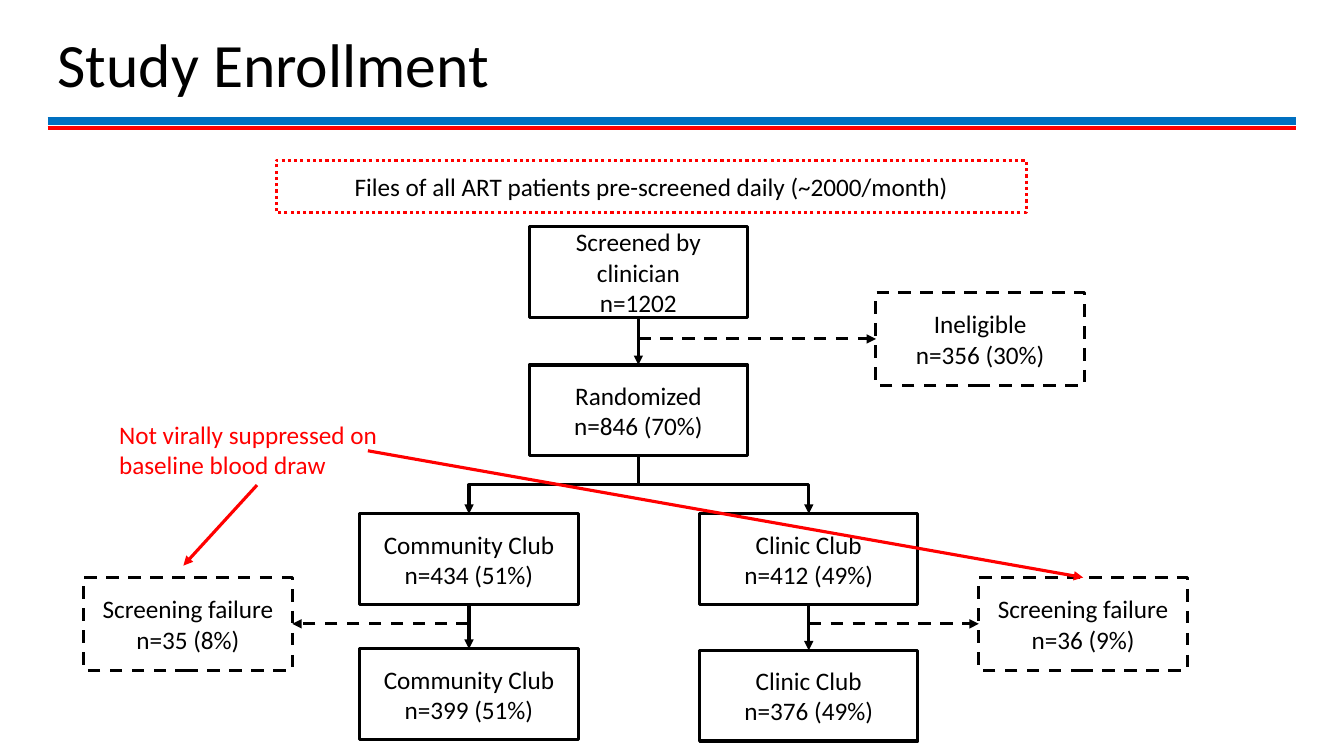
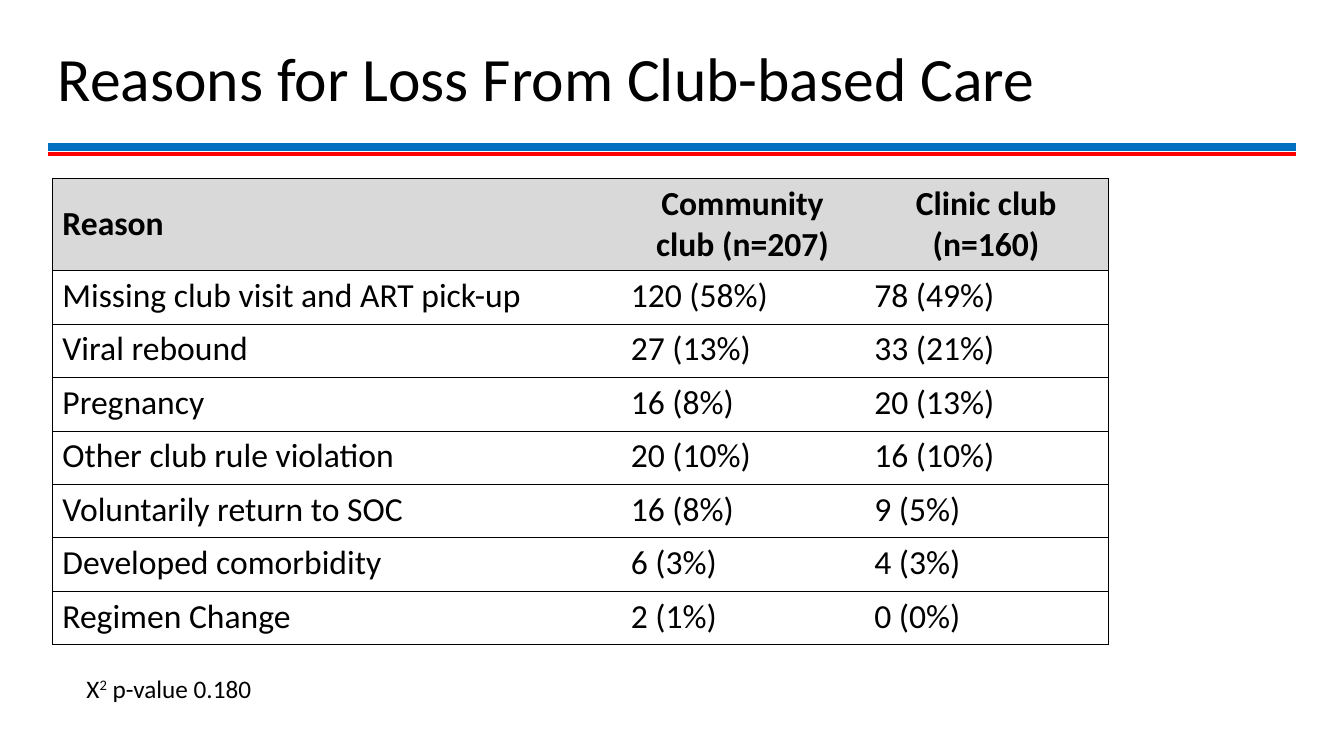
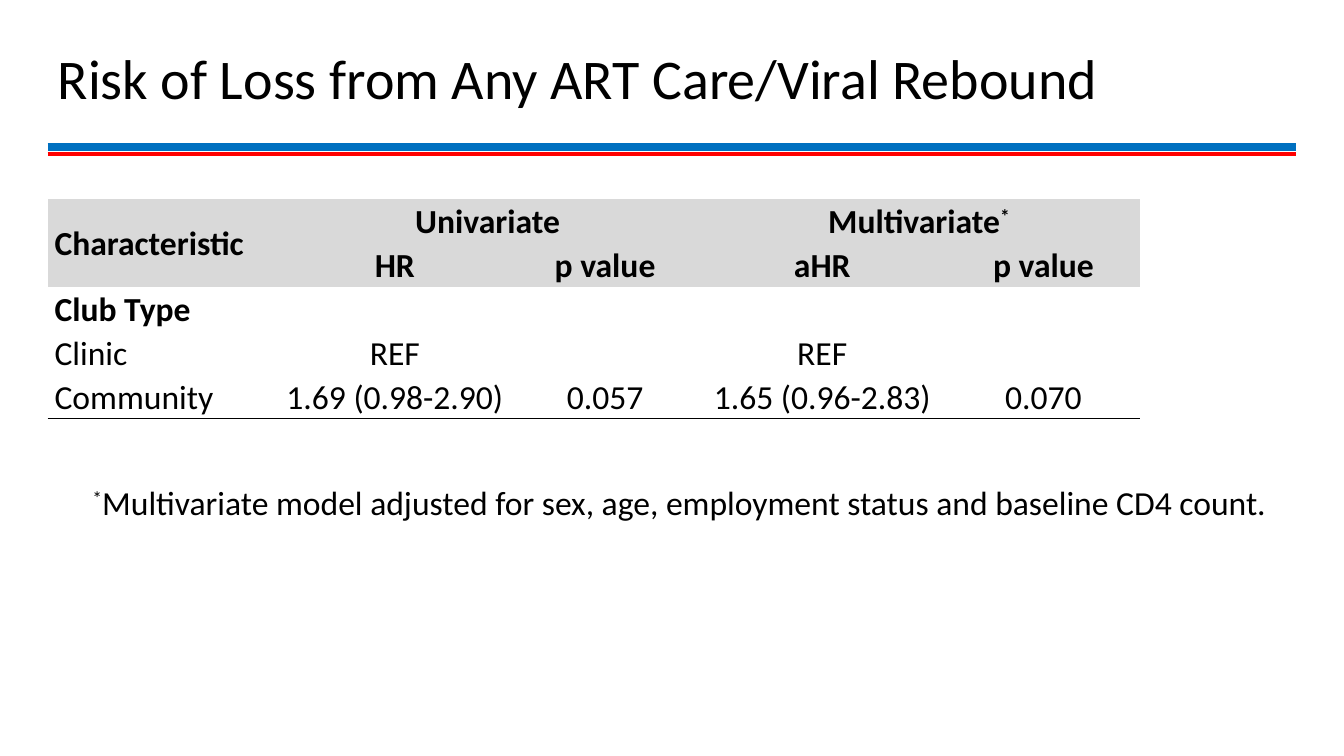
from dataclasses import dataclass
from typing import NamedTuple, Optional, Union

from pptx import Presentation
from pptx import util as u
from pptx.dml.color import RGBColor
from pptx.enum import dml, shapes, text
from pptx.oxml.ns import qn
from lxml import etree

Pt = u.Pt
FONT = "Calibri"
BLACK = RGBColor(0x00, 0x00, 0x00)
RED = RGBColor(0xFF, 0x00, 0x00)
BLUE = RGBColor(0x00, 0x70, 0xC0)
GREY = RGBColor(0xD9, 0xD9, 0xD9)

LEFT, RIGHT = 34, 926
LINE = 2.25
DASH, DOT = dml.MSO_LINE.DASH, dml.MSO_LINE.ROUND_DOT
CENTER = text.PP_ALIGN.CENTER
MIDDLE = text.MSO_ANCHOR.MIDDLE
TOP_SIDE, LEFT_SIDE, BOTTOM_SIDE, RIGHT_SIDE = range(4)
NO_STYLE = "{2D5ABB26-0587-4C30-8999-92F81FD0307C}"


@dataclass
class Box:
    text: str
    x: float
    y: float
    w: float = 156
    h: float = 64.8
    color: RGBColor = BLACK
    dash: Optional[dml.MSO_LINE] = None


class Point(NamedTuple):
    x: float
    y: float


class Joint(NamedTuple):
    shape: object
    site: int


class Header(NamedTuple):
    row: int
    col: int
    last_row: int
    last_col: int


End = Union[Point, Joint]


def write(tf, content: str, size: float, color=BLACK, bold=False, align=None, spacing=None) -> None:
    """Fill a text frame; a part between two ^ marks is superscript."""
    tf.text = content
    for p in tf.paragraphs:
        parts = p.text.split("^")
        p.text = parts[0]
        for i, part in enumerate(parts[1:], 1):
            r = p.add_run()
            r.text = part
            if i % 2:
                r.font._element.set("baseline", "30000")
        p.alignment = align
        p.line_spacing = spacing
        for r in p.runs:
            r.font.name, r.font.size, r.font.bold = FONT, Pt(size), bold
            r.font.color.rgb = color


def add_connector(s, start: End, end: End, color=BLACK, width=LINE, dash=None,
                  arrow=True, kind=shapes.MSO_CONNECTOR.STRAIGHT):
    ends = [e if isinstance(e, Point) else Point(0, 0) for e in (start, end)]
    c = s.shapes.add_connector(kind, *(Pt(v) for e in ends for v in e))
    if isinstance(start, Joint):
        c.begin_connect(*start)
    if isinstance(end, Joint):
        c.end_connect(*end)
    c.line.color.rgb, c.line.width = color, Pt(width)
    if dash:
        c.line.dash_style = dash
    if arrow:
        etree.SubElement(c.line._get_or_add_ln(), qn("a:tailEnd"), type="triangle")
    etree.SubElement(c._element.spPr, qn("a:effectLst"))
    return c


def add_elbow(s, start: Joint, end: Joint) -> None:
    """Arrow that leaves downward, turns halfway and arrives downward."""
    c = add_connector(s, start, end, kind=shapes.MSO_CONNECTOR.ELBOW)
    x1, y1, x2, y2 = c.begin_x, c.begin_y, c.end_x, c.end_y
    drop, reach = y2 - y1, abs(x2 - x1)
    to_right = x2 > x1
    xfrm = c._element.spPr.find(qn("a:xfrm"))
    xfrm.set("rot", str((270 if to_right else 90) * 60000))
    xfrm.set("flipH", "1" if to_right else "0")
    xfrm.set("flipV", "0")
    c.left, c.top = (x1 + x2 - drop) // 2, (y1 + y2 - reach) // 2
    c.width, c.height = drop, reach


def add_box(s, box: Box):
    sp = s.shapes.add_shape(shapes.MSO_SHAPE.RECTANGLE, Pt(box.x), Pt(box.y), Pt(box.w), Pt(box.h))
    sp.shadow.inherit = False
    sp.fill.background()
    sp.line.color.rgb, sp.line.width = box.color, Pt(LINE)
    if box.dash:
        sp.line.dash_style = box.dash
    tf = sp.text_frame
    tf.word_wrap, tf.vertical_anchor = True, MIDDLE
    write(tf, box.text, 18, align=CENTER)
    return sp


def add_note(s, content: str, x: float, y: float, w: float, h: float, size=18, color=BLACK) -> None:
    tf = s.shapes.add_textbox(Pt(x), Pt(y), Pt(w), Pt(h)).text_frame
    tf.word_wrap = True
    tf.auto_size = text.MSO_AUTO_SIZE.SHAPE_TO_FIT_TEXT
    write(tf, content, size, color)


def add_slide(prs, title: str, size=44, top=6, height=104.4, band_y=105.1):
    """Title-only slide with the blue and red rules under its title."""
    s = prs.slides.add_slide(prs.slide_layouts[5])
    sp = s.shapes.title
    sp.left, sp.top, sp.width, sp.height = Pt(LEFT), Pt(top), Pt(RIGHT - LEFT), Pt(height)
    tf = sp.text_frame
    tf.word_wrap, tf.vertical_anchor = True, MIDDLE
    tf.auto_size = text.MSO_AUTO_SIZE.NONE
    write(tf, title, size, align=text.PP_ALIGN.LEFT, spacing=0.9)
    for y, color, width in ((band_y, BLUE, 6), (band_y + 5.1, RED, 3)):
        add_connector(s, Point(LEFT, y), Point(RIGHT, y), color, width, arrow=False)
    return s


def add_table(s, x: float, y: float, widths: list[float], heights: list[float]):
    """Plain table without a style, so only what is set here shows."""
    frame = s.shapes.add_table(len(heights), len(widths), Pt(x), Pt(y),
                               Pt(sum(widths)), Pt(sum(heights)))
    table = frame.table
    table.first_row = table.horz_banding = False
    table._tbl.tblPr.find(qn("a:tableStyleId")).text = NO_STYLE
    for col, w in zip(table.columns, widths):
        col.width = Pt(w)
    for row, h in zip(table.rows, heights):
        row.height = Pt(h)
    return table


def format_cell(cell, header: bool, edges: str, width: float) -> None:
    """Draw black borders on the edges (letters out of LRTB), then fill."""
    tc_pr = cell._tc.get_or_add_tcPr()
    for edge in edges:
        ln = etree.SubElement(tc_pr, qn(f"a:ln{edge}"), w=str(Pt(width)))
        fill = etree.SubElement(ln, qn("a:solidFill"))
        etree.SubElement(fill, qn("a:srgbClr"), val=str(BLACK))
    if header:
        cell.fill.solid()
        cell.fill.fore_color.rgb = GREY
    else:
        cell.fill.background()


def enrollment(prs) -> None:
    s = add_slide(prs, "Study Enrollment", top=10.8, height=75.6, band_y=86.4)
    middle, community, clinic = 456, 335, 577.7

    def step(content: str, center: float, y: float):
        return add_box(s, Box(content, center - Box.w / 2, y))

    def dropout(content: str, x: float, y: float):
        return add_box(s, Box(content, x, y, 149, 66.2, dash=DASH))

    add_box(s, Box("Files of all ART patients pre-screened daily (~2000/month)",
                   197.3, 114.5, 535.7, 37.4, RED, DOT))
    screened = step("Screened by clinician\nn=1202", middle, 162)
    randomized = step("Randomized\nn=846 (70%)", middle, 260.7)
    community_start = step("Community Club\nn=434 (51%)", community, 367)
    clinic_start = step("Clinic Club\nn=412 (49%)", clinic, 367)
    community_end = step("Community Club\nn=399 (51%)", community, 463.5)
    clinic_end = step("Clinic Club\nn=376 (49%)", clinic, 464.5)
    ineligible = dropout("Ineligible\nn=356 (30%)", 625.7, 209)
    clinic_failure = dropout("Screening failure\nn=36 (9%)", 699.2, 412.5)
    community_failure = dropout("Screening failure\nn=35 (8%)", 59.8, 412.5)

    for upper, lower in ((screened, randomized), (community_start, community_end),
                         (clinic_start, clinic_end)):
        add_connector(s, Joint(upper, BOTTOM_SIDE), Joint(lower, TOP_SIDE))
    for club in (clinic_start, community_start):
        add_elbow(s, Joint(randomized, BOTTOM_SIDE), Joint(club, TOP_SIDE))
    for x, box, side in ((middle, ineligible, LEFT_SIDE), (clinic, clinic_failure, LEFT_SIDE),
                         (community, community_failure, RIGHT_SIDE)):
        y = (box.top + box.height / 2) / Pt(1)
        add_connector(s, Point(x, y), Joint(box, side), dash=DASH)

    add_note(s, "Not virally suppressed on baseline blood draw", 78, 296, 211.7, 51, color=RED)
    add_connector(s, Point(183.6, 346.5), Point(131, 404), RED)
    add_connector(s, Point(262.8, 322), Joint(clinic_failure, TOP_SIDE), RED)


def loss_reasons(prs) -> None:
    s = add_slide(prs, "Reasons for Loss From Club-based Care")
    rows = [
        ("Reason", "Community club (n=207)", "Clinic club (n=160)"),
        ("Missing club visit and ART pick-up", "120 (58%)", "78 (49%)"),
        ("Viral rebound", "27 (13%)", "33 (21%)"),
        ("Pregnancy", "16 (8%)", "20 (13%)"),
        ("Other club rule violation", "20 (10%)", "16 (10%)"),
        ("Voluntarily return to SOC", "16 (8%)", "9 (5%)"),
        ("Developed comorbidity", "6 (3%)", "4 (3%)"),
        ("Regimen Change", "2 (1%)", "0 (0%)"),
    ]
    table = add_table(s, 37.4, 127.4, [406, 174, 174], [65.5] + [38.2] * 7)
    for i, row in enumerate(rows):
        for j, content in enumerate(row):
            cell, header = table.cell(i, j), i == 0
            if header:
                cell.vertical_anchor = MIDDLE
            write(cell.text_frame, content, 24, bold=header,
                  align=CENTER if header and j else None)
            format_cell(cell, header, ("LTB", "TB", "RTB")[j], 0.5)
    add_note(s, "Χ^2^ p-value 0.180", 54.7, 477.4, 160.6, 30)


def loss_risk(prs) -> None:
    s = add_slide(prs, "Risk of Loss from Any ART Care/Viral Rebound", size=40)
    add_note(s, "^*^Multivariate model adjusted for sex, age, employment status "
                "and baseline CD4 count.", 59, 340.6, 867, 36, size=24)
    rows = [
        ("Characteristic", "Univariate", "", "Multivariate^*^", ""),
        ("", "HR", "p value", "aHR", "p value"),
        ("Club Type", "", "", "", ""),
        ("Clinic", "REF", "", "REF", ""),
        ("Community", "1.69 (0.98-2.90)", "0.057", "1.65 (0.96-2.83)", "0.070"),
    ]
    table = add_table(s, LEFT, 142, [164.2, 167.8, 132.5, 177.8, 138.2], [31.4] * 5)
    for m in (Header(0, 0, 1, 0), Header(0, 1, 0, 2), Header(0, 3, 0, 4)):
        table.cell(m.row, m.col).merge(table.cell(m.last_row, m.last_col))
    for i, row in enumerate(rows):
        for j, content in enumerate(row):
            cell = table.cell(i, j)
            cell.margin_left = cell.margin_right = Pt(5)
            cell.margin_top = cell.margin_bottom = Pt(0)
            cell.vertical_anchor = MIDDLE if i < 2 else None
            if content:
                write(cell.text_frame, content, 24, bold=i < 3,
                      align=CENTER if j else None, spacing=1.07)
            format_cell(cell, i < 2, "B" if i == len(rows) - 1 else "", 1)


def main() -> None:
    prs = Presentation()
    prs.slide_width, prs.slide_height = Pt(960), Pt(540)
    enrollment(prs)
    loss_reasons(prs)
    loss_risk(prs)
    prs.save("out.pptx")


if __name__ == "__main__":
    main()
